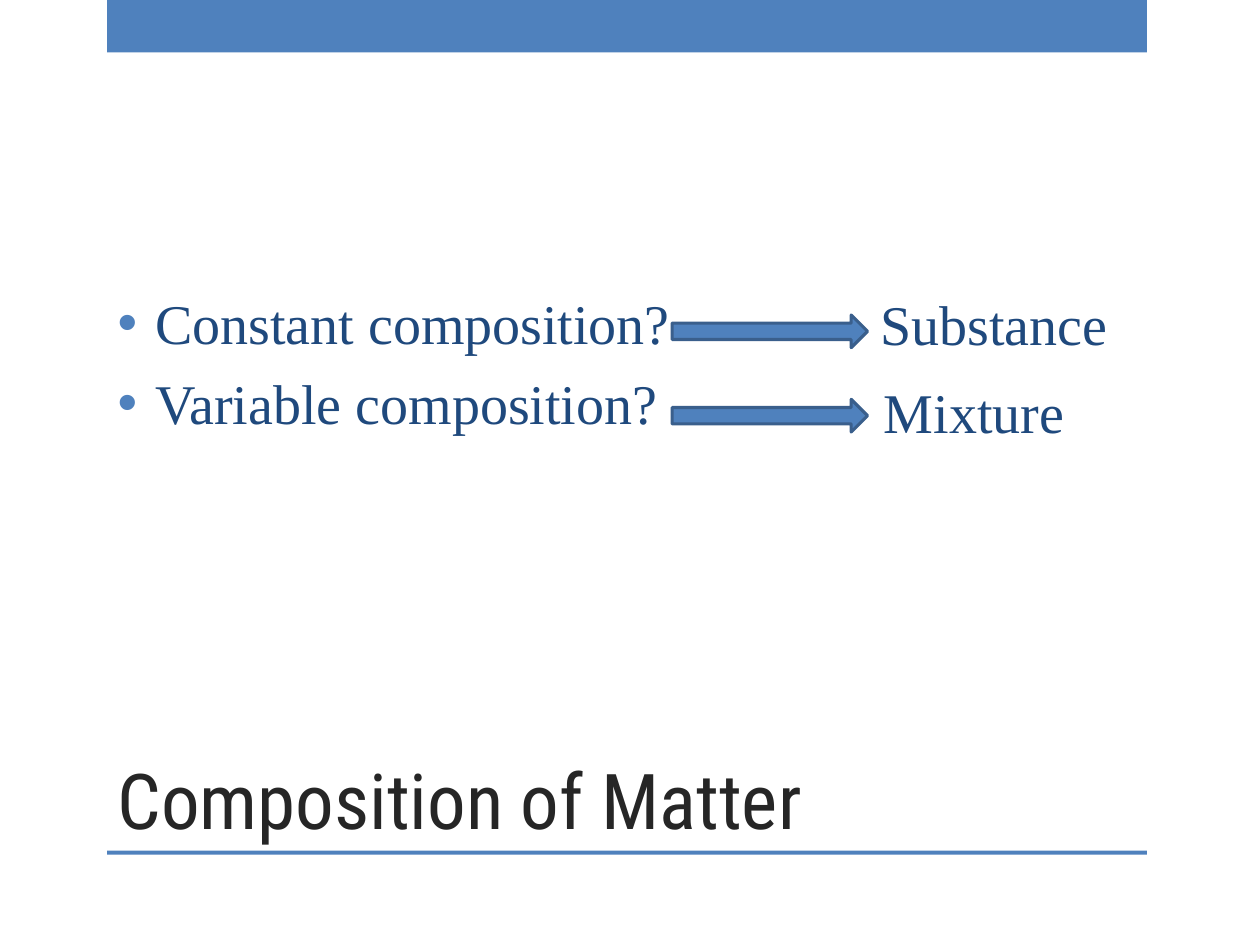
from lxml import etree
from pptx import Presentation
from pptx.dml.color import RGBColor
from pptx.enum.shapes import MSO_SHAPE
from pptx.enum.text import MSO_ANCHOR
from pptx.oxml.ns import qn
from pptx.util import Cm, Pt

RECT, ARROW = MSO_SHAPE.RECTANGLE, MSO_SHAPE.RIGHT_ARROW
TOP, MID, LOW = MSO_ANCHOR.TOP, MSO_ANCHOR.MIDDLE, MSO_ANCHOR.BOTTOM
BLUE, EDGE, NAVY, DARK = "4F81BD", "3A5F8C", "1F497D", "262626"
SERIF, HEAD = "Times New Roman", "Roboto Condensed"


def color(code):
    return RGBColor.from_string(code)


def write(para, text, font=SERIF, size=32, ink=NAVY):
    run = para.add_run()
    run.text = text
    run.font.name = font
    run.font.size = Pt(size)
    run.font.color.rgb = color(ink)


def bullet(para, indent=0.76):
    props = para._p.get_or_add_pPr()
    props.set("marL", str(Cm(indent)))
    props.set("indent", str(-Cm(indent)))
    tint = etree.SubElement(props, qn("a:buClr"))
    etree.SubElement(tint, qn("a:srgbClr"), val=BLUE)
    etree.SubElement(props, qn("a:buFont"), typeface="Arial")
    etree.SubElement(props, qn("a:buChar"), char="•")


class Page:
    def __init__(self, deck):
        self.slide = deck.slides.add_slide(deck.slide_layouts[6])

    def shape(self, kind, box, edge=None):
        item = self.slide.shapes.add_shape(kind, *map(Cm, box))
        item.shadow.inherit = False
        item.fill.solid()
        item.fill.fore_color.rgb = color(BLUE)
        if edge:
            item.line.color.rgb = color(edge)
            item.line.width = Pt(1.75)
        else:
            item.line.fill.background()

    def text(self, lines, box, anchor=TOP, dots=False, **style):
        frame = self.slide.shapes.add_textbox(*map(Cm, box)).text_frame
        frame.word_wrap = True
        frame.vertical_anchor = anchor
        for i, line in enumerate(lines):
            para = frame.add_paragraph() if i else frame.paragraphs[0]
            if dots:
                para.space_before = Pt(7.5)
                bullet(para)
            write(para, line, **style)


def main():
    deck = Presentation()
    deck.slide_width, deck.slide_height = Cm(25.4), Cm(19.05)
    page = Page(deck)

    # Top band and bottom rule
    for top, height in ((0, 1.06), (17.15, 0.08)):
        page.shape(RECT, (2.16, top, 20.96, height))

    # Title and questions
    page.text(["Composition of Matter"], (2.12, 12.7, 18.84, 4.45),
              anchor=LOW, font=HEAD, size=44, ink=DARK)
    page.text(["Constant composition?", "Variable composition?"],
              (2.12, 1.9, 20.96, 10.8), anchor=MID, dots=True)

    # Arrows and answers
    for top in (6.35, 8.05):
        page.shape(ARROW, (13.55, top, 3.94, 0.66), EDGE)
    page.text(["Substance"], (17.5, 5.72, 7.9, 1.62))
    page.text(["Mixture"], (17.57, 7.48, 7.2, 1.62))

    deck.save("out.pptx")


if __name__ == "__main__":
    main()
